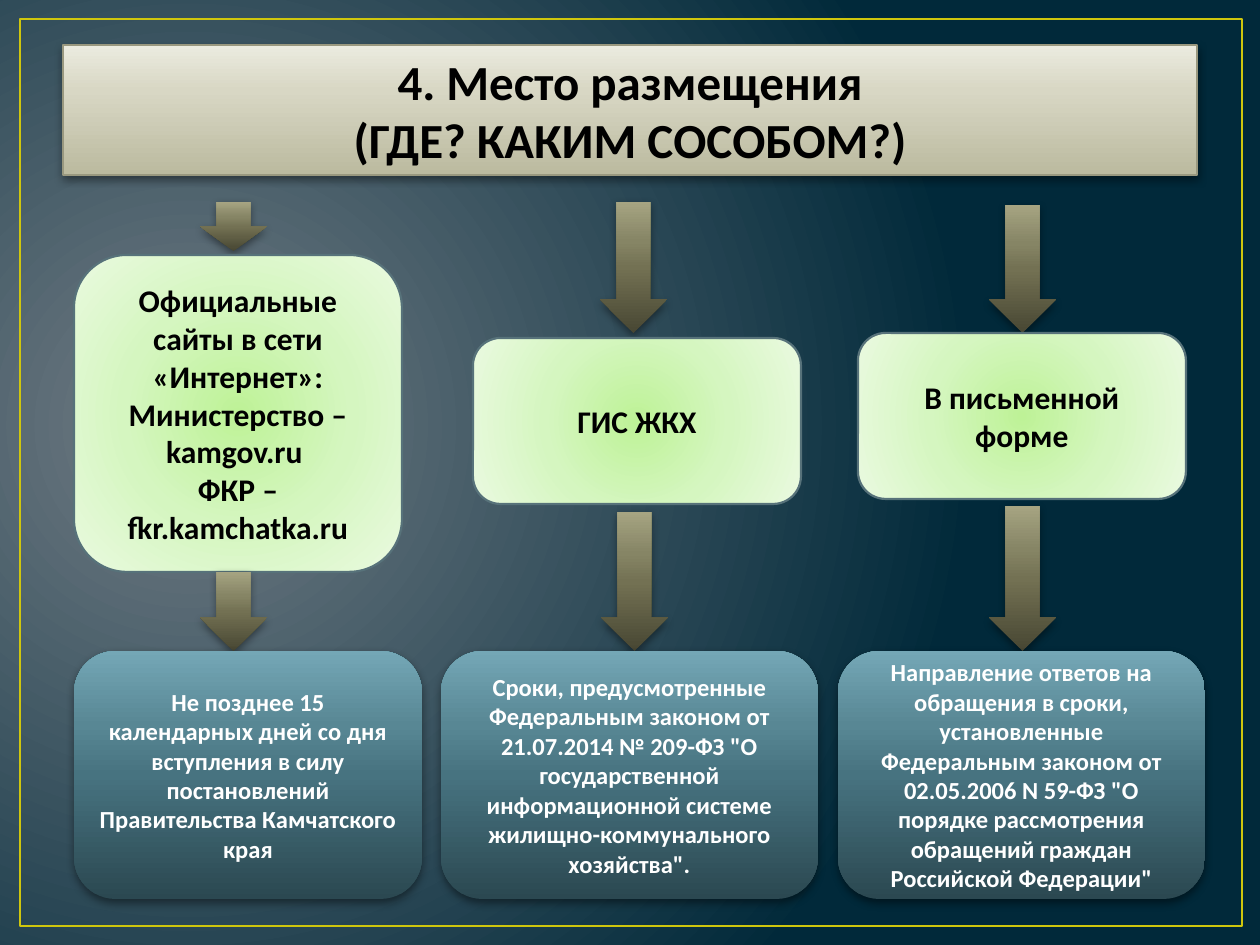
from pptx import Presentation
from pptx.dml.color import RGBColor
from pptx.enum.shapes import MSO_SHAPE
from pptx.enum.text import MSO_ANCHOR, PP_ALIGN
from pptx.oxml import parse_xml
from pptx.oxml.ns import nsdecls, qn
from pptx.util import Emu, Pt

RECT = MSO_SHAPE.RECTANGLE
ROUND = MSO_SHAPE.ROUNDED_RECTANGLE
ARROW = MSO_SHAPE.DOWN_ARROW
MIDDLE, BOTTOM = MSO_ANCHOR.MIDDLE, MSO_ANCHOR.BOTTOM
CENTER = PP_ALIGN.CENTER

BLACK = RGBColor(0x00, 0x00, 0x00)
WHITE = RGBColor(0xFF, 0xFF, 0xFF)
YELLOW = RGBColor(0xCF, 0xC6, 0x0D)
KHAKI = RGBColor(0x99, 0x98, 0x7F)
SLATE = RGBColor(0x57, 0x72, 0x7A)

NIGHT = [(0, RGBColor(0x71, 0x7C, 0x84)), (100, RGBColor(0x01, 0x29, 0x3A))]
SAND = [(0, RGBColor(0xBB, 0xBA, 0x9F)), (65, RGBColor(0xD8, 0xD7, 0xC4)),
        (100, RGBColor(0xEB, 0xEB, 0xDF))]
OLIVE = [(0, RGBColor(0x48, 0x47, 0x33)), (50, RGBColor(0x73, 0x71, 0x53)),
         (70, RGBColor(0x86, 0x85, 0x65)), (100, RGBColor(0xA6, 0xA4, 0x82))]
GREEN = [(0, RGBColor(0xBE, 0xF2, 0x97)), (50, RGBColor(0xD5, 0xF6, 0xC0)),
         (100, RGBColor(0xEA, 0xFA, 0xE0))]
TEAL = [(0, RGBColor(0x2B, 0x48, 0x51)), (50, RGBColor(0x47, 0x73, 0x80)),
        (70, RGBColor(0x58, 0x87, 0x94)), (100, RGBColor(0x74, 0xA7, 0xB6))]

FONT = "Calibri"
PX_PER_INCH = 126
ARROW_W = 67
BOX_W = 328
TERM_TOP, TERM_H = 651, 248


def px(n):
    return Emu(round(n * 914400 / PX_PER_INCH))


def write(tf, paragraphs, size=18, color=BLACK, anchor=MIDDLE):
    tf.word_wrap = True
    tf.vertical_anchor = anchor
    for i, text in enumerate(paragraphs):
        p = tf.add_paragraph() if i else tf.paragraphs[0]
        p.alignment = CENTER
        for j, line in enumerate(text.splitlines()):
            if j:
                p.add_line_break()
            r = p.add_run()
            r.text = line
            r.font.name = FONT
            r.font.size = Pt(size)
            r.font.bold = True
            r.font.color.rgb = color


def set_gradient(fill, root, stops, focus=None):
    fill.gradient()
    stop_xml = "".join(
        f'<a:gs pos="{pos * 1000}"><a:srgbClr val="{color}"/></a:gs>'
        for pos, color in stops)
    if focus:
        sides = " ".join(f'{side}="{n * 1000}"' for side, n in zip("ltrb", focus))
        shade = f'<a:path path="circle"><a:fillToRect {sides}/></a:path>'
    else:
        shade = '<a:lin ang="16200000" scaled="0"/>'
    new = parse_xml(f'<a:gradFill {nsdecls("a")} rotWithShape="1">'
                    f'<a:gsLst>{stop_xml}</a:gsLst>{shade}</a:gradFill>')
    old = next(root.iter(qn("a:gradFill")))
    old.getparent().replace(old, new)


class Deck:
    def __init__(self):
        self.prs = Presentation()
        self.prs.slide_width = px(1260)
        self.prs.slide_height = px(945)
        self.s = self.prs.slides.add_slide(self.prs.slide_layouts[6])

    def background(self, stops, focus):
        set_gradient(self.s.background.fill, self.s.element, stops, focus)

    def shape(self, kind, x, y, w, h, stops=None, focus=None, line=None,
              width=1, shadow=False):
        sp = self.s.shapes.add_shape(kind, px(x), px(y), px(w), px(h))
        sp.shadow.inherit = False
        if stops:
            set_gradient(sp.fill, sp.element.spPr, stops, focus)
        else:
            sp.fill.background()
        if line:
            sp.line.color.rgb = line
            sp.line.width = Pt(width)
        else:
            sp.line.fill.background()
        if shadow:
            sp.element.spPr.find(qn("a:effectLst")).append(parse_xml(
                f'<a:outerShdw {nsdecls("a")} blurRad="{Pt(5)}" dist="{Pt(2)}" '
                'dir="5400000" rotWithShape="0"><a:srgbClr val="000000">'
                '<a:alpha val="43000"/></a:srgbClr></a:outerShdw>'))
        return sp

    def frame(self, x, y, w, h):
        self.shape(RECT, x, y, w, h, line=YELLOW, width=1.5)

    def title(self, x, y, w, h, text):
        sp = self.shape(RECT, x, y, w, h, SAND, line=KHAKI, width=0.75, shadow=True)
        write(sp.text_frame, [text], size=28, anchor=BOTTOM)

    def arrow(self, x, top, bottom):
        self.shape(ARROW, x, top, ARROW_W, bottom - top, OLIVE, shadow=True)

    def place(self, x, y, h, paragraphs):
        sp = self.shape(ROUND, x, y, BOX_W, h, GREEN, (50, 50, 50, 50), SLATE, 1.25)
        write(sp.text_frame, paragraphs)

    def term(self, x, w, text):
        sp = self.shape(ROUND, x, TERM_TOP, w, TERM_H, TEAL, shadow=True)
        write(sp.text_frame, [text], size=14, color=WHITE)


PLACES = [
    (74, 255, 317, ["Официальные сайты в сети «Интернет»:",
                    "Министерство – kamgov.ru ", "ФКР – fkr.kamchatka.ru"]),
    (473, 338, 166, ["ГИС ЖКХ"]),
    (858, 333, 166, ["В письменной форме"]),
]
UPPER_ARROWS = [(200, 202, 251), (600, 202, 333), (989, 205, 333)]
LOWER_ARROWS = [(200, 572), (601, 512), (989, 506)]
TERMS = [
    (74, 348, "Не позднее 15 календарных дней со дня вступления в силу "
              "постановлений Правительства Камчатского края"),
    (441, 377, "Сроки, предусмотренные Федеральным законом от 21.07.2014 "
               '№ 209-ФЗ "О государственной информационной системе '
               'жилищно-коммунального хозяйства".'),
    (838, 367, "Направление ответов на обращения в сроки, установленные "
               'Федеральным законом от 02.05.2006 N 59-ФЗ "О порядке '
               'рассмотрения обращений граждан Российской Федерации"'),
]
TITLE = """4. Место размещения
(ГДЕ? КАКИМ СОСОБОМ?)"""


def main():
    deck = Deck()
    deck.background(NIGHT, (15, 50, 85, 60))
    deck.frame(20, 19, 1222, 907)
    deck.title(63, 45, 1134, 130, TITLE)
    for x, top, bottom in UPPER_ARROWS:
        deck.arrow(x, top, bottom)
    for place in PLACES:
        deck.place(*place)
    for x, top in LOWER_ARROWS:
        deck.arrow(x, top, TERM_TOP)
    for term in TERMS:
        deck.term(*term)
    deck.prs.save("out.pptx")


if __name__ == "__main__":
    main()
